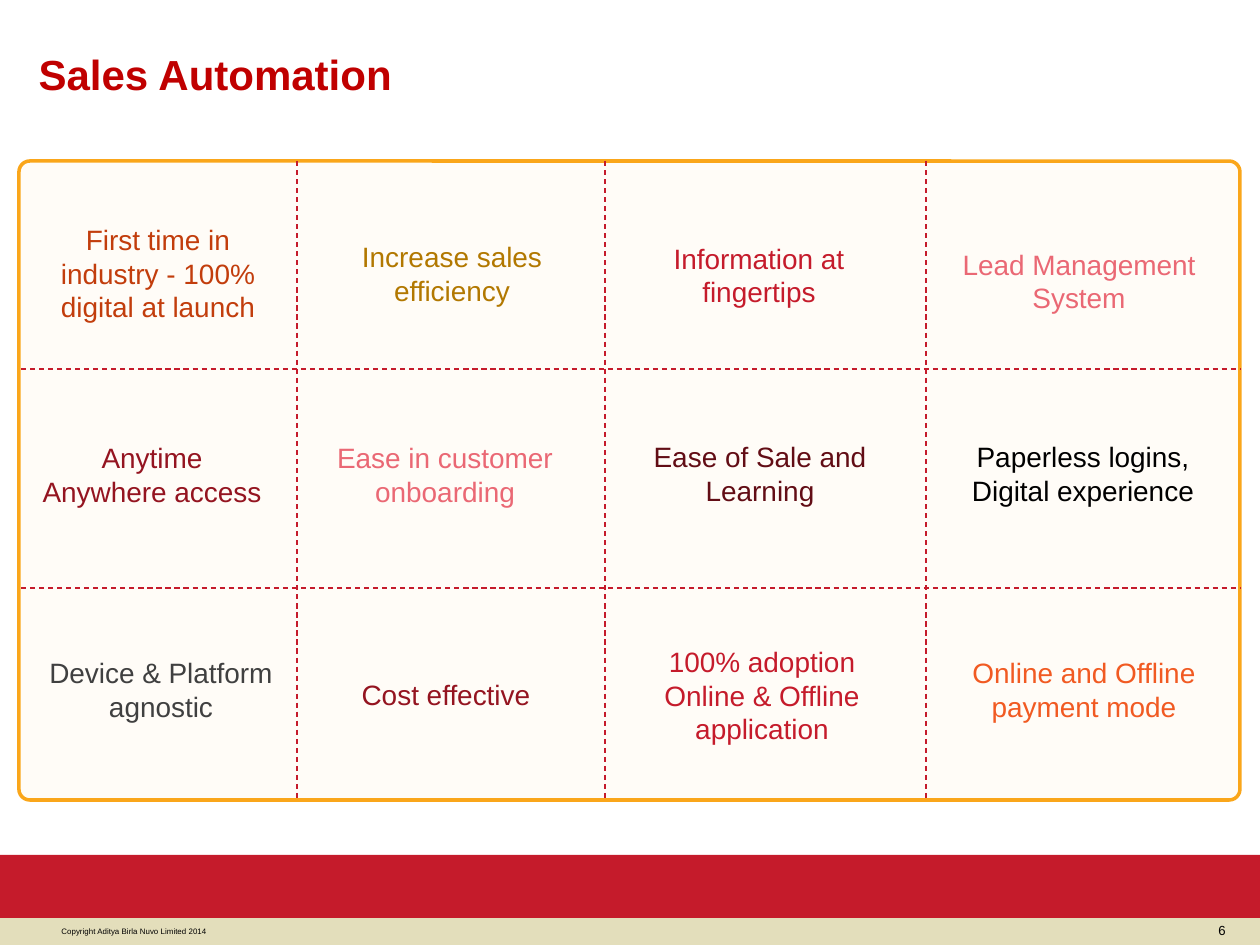
from lxml.etree import SubElement
from pptx import Presentation
from pptx.dml.color import RGBColor
from pptx.enum.dml import MSO_LINE
from pptx.enum.shapes import MSO_CONNECTOR, MSO_SHAPE
from pptx.enum.text import MSO_ANCHOR, PP_ALIGN
from pptx.oxml.ns import qn
from pptx.util import Pt

PX = 914400 / 126
RED = "C51B2B"

TITLE = "Sales Automation"
COPYRIGHT = "Copyright Aditya Birla Nuvo Limited 2014"
PAGE = "6"

FRAME = (19, 161, 1221, 639)
COLUMN_RULES = (297, 605, 926)
ROW_RULES = (369, 588)
LINE_HEIGHT, LINE_PADDING = 34, 13

# text, colour, centre x, centre y, box width, lines
BENEFITS = [
    ("First time in industry - 100% digital at launch", "C23D0C", 158, 273, 248, 3),
    ("Increase sales efficiency", "B27800", 452, 273, 247, 2),
    ("Information at fingertips", RED, 759, 275, 247, 2),
    ("Lead Management System", "EA6874", 1079, 281, 273, 2),
    ("Anytime Anywhere access", "941420", 152, 474, 247, 2),
    ("Ease in customer onboarding", "EA6874", 445, 474, 244, 2),
    ("Ease of Sale and Learning", "620D15", 760, 473, 247, 2),
    ("Paperless logins, Digital experience", "000000", 1083, 473, 273, 2),
    ("Device & Platform agnostic", "404040", 161, 689, 249, 2),
    ("Cost effective", "941420", 446, 694, 247, 1),
    ("100% adoption\nOnline & Offline application", RED, 762, 695, 247, 3),
    ("Online and Offline payment mode", "F15A22", 1084, 689, 273, 2),
]


def px(*lengths):
    return [round(n * PX) for n in lengths]


def rgb(value):
    return RGBColor.from_string(value)


def write(shape, text, size, colour, align=PP_ALIGN.LEFT, anchor=MSO_ANCHOR.MIDDLE, bold=False):
    tf = shape.text_frame
    tf.text = text
    tf.word_wrap = True
    tf.vertical_anchor = anchor
    for p in tf.paragraphs:
        p.alignment = align
        p.font.name = "Arial"
        p.font.size = Pt(size)
        p.font.bold = bold
        p.font.color.rgb = rgb(colour)


def add_box(s, kind, box, fill):
    sp = s.shapes.add_shape(kind, *px(*box))
    sp.shadow.inherit = False
    sp.fill.solid()
    sp.fill.fore_color.rgb = rgb(fill)
    sp.line.fill.background()
    return sp


def add_rule(s, x1, y1, x2, y2):
    rule = s.shapes.add_connector(MSO_CONNECTOR.STRAIGHT, *px(x1, y1, x2, y2))
    rule.line.color.rgb = rgb(RED)
    rule.line.width = Pt(0.75)
    rule.line.dash_style = MSO_LINE.DASH
    SubElement(rule._element.spPr, qn("a:effectLst"))


def add_footer(s):
    strip = add_box(s, MSO_SHAPE.RECTANGLE, (0, 917, 1260, 28), "E3DEBB")
    write(strip, COPYRIGHT, 4.5, "000000")
    strip.text_frame.paragraphs[0]._p.get_or_add_pPr().set("marL", str(px(49)[0]))
    add_box(s, MSO_SHAPE.RECTANGLE, (0, 855, 1260, 63), RED)
    number = s.shapes.add_textbox(*px(944, 916, 294, 29))
    write(number, PAGE, 7.5, "000000", PP_ALIGN.RIGHT, MSO_ANCHOR.TOP)


def add_grid(s):
    left, top, width, height = FRAME
    frame = add_box(s, MSO_SHAPE.ROUNDED_RECTANGLE, FRAME, "FFFCF7")
    frame.adjustments[0] = 0.017
    frame.line.color.rgb = rgb("FAA61A")
    frame.line.width = Pt(2)
    for x in COLUMN_RULES:
        add_rule(s, x, top, x, top + height)
    for y in ROW_RULES:
        add_rule(s, left + 2, y, left + width, y)
    for text, colour, cx, cy, width, lines in BENEFITS:
        height = LINE_PADDING + LINE_HEIGHT * lines
        label = s.shapes.add_textbox(*px(cx - width / 2, cy - height / 2, width, height))
        write(label, text, 16, colour, PP_ALIGN.CENTER)


def main():
    prs = Presentation()
    prs.slide_width, prs.slide_height = px(1260, 945)
    s = prs.slides.add_slide(prs.slide_layouts[5])
    title = s.shapes.title
    title.left, title.top, title.width, title.height = px(26, -4, 1027, 155)
    write(title, TITLE, 24, "C00000", bold=True)
    add_footer(s)
    add_grid(s)
    prs.save("out.pptx")


if __name__ == "__main__":
    main()
